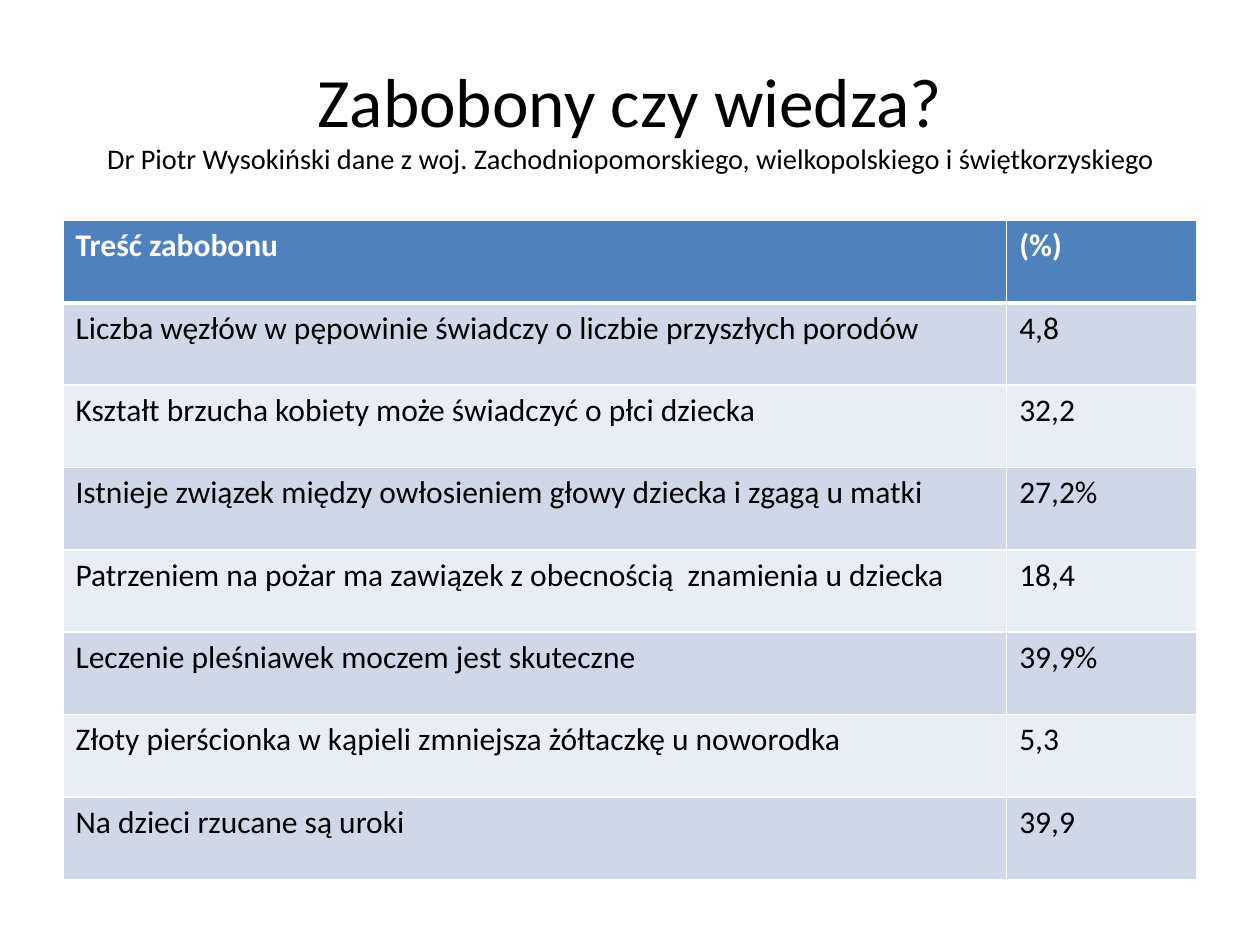
from pptx import Presentation
from pptx.dml.color import RGBColor
from pptx.enum.text import MSO_ANCHOR as Anchor, PP_ALIGN as Align
from pptx.oxml import parse_xml
from pptx.oxml.ns import nsdecls
from pptx.util import Inches, Pt

BLACK = RGBColor(0x00, 0x00, 0x00)
WHITE = RGBColor(0xFF, 0xFF, 0xFF)
BLUE = RGBColor(0x4F, 0x81, 0xBD)
BANDS = [RGBColor(0xE9, 0xED, 0xF4), RGBColor(0xD0, 0xD8, 0xE8)]

ROWS = [
    ("Treść zabobonu", "(%)"),
    ("Liczba węzłów w pępowinie świadczy o liczbie przyszłych porodów", "4,8"),
    ("Kształt brzucha kobiety może świadczyć o płci dziecka", "32,2"),
    ("Istnieje związek między owłosieniem głowy dziecka i zgagą u matki", "27,2%"),
    ("Patrzeniem na pożar ma zawiązek z obecnością  znamienia u dziecka", "18,4"),
    ("Leczenie pleśniawek moczem jest skuteczne", "39,9%"),
    ("Złoty pierścionka w kąpieli zmniejsza żółtaczkę u noworodka", "5,3"),
    ("Na dzieci rzucane są uroki", "39,9"),
]


def add_run(para, text, size, color=BLACK, bold=False):
    run = para.add_run()
    run.text = text
    look = {"name": "Calibri", "size": Pt(size), "bold": bold}
    for key, value in look.items():
        setattr(run.font, key, value)
    run.font.color.rgb = color


def add_edges(cell, widths):
    """Draw white cell borders; widths maps a side (L, R, T, B) to points."""
    props = cell._tc.get_or_add_tcPr()
    for side, width in widths.items():
        props.append(parse_xml(
            f'<a:ln{side} {nsdecls("a")} w="{Pt(width)}"><a:solidFill>'
            f'<a:srgbClr val="{WHITE}"/></a:solidFill></a:ln{side}>'))


prs = Presentation()
prs.slide_width, prs.slide_height = Inches(10), Inches(7.5)
slide = prs.slides.add_slide(prs.slide_layouts[6])

# Title and source line
title = slide.shapes.add_textbox(Inches(0.5), Inches(0.3), Inches(9), Inches(1.25))
frame = title.text_frame
frame.word_wrap = True
frame.vertical_anchor = Anchor.MIDDLE
para = frame.paragraphs[0]
para.alignment = Align.CENTER
add_run(para, "Zabobony czy wiedza?", 39.6)
para.add_line_break()
add_run(para, "Dr Piotr Wysokiński dane z woj. Zachodniopomorskiego, "
              "wielkopolskiego i świętkorzyskiego", 16.2)

# Table of superstitions
table = slide.shapes.add_table(len(ROWS), 2, Inches(0.5), Inches(1.75),
                               Inches(9), Inches(5.23)).table
for col, width in zip(table.columns, (7.49, 1.51)):
    col.width = Inches(width)

for r, row in enumerate(ROWS):
    head = r == 0
    for c, text in enumerate(row):
        cell = table.cell(r, c)
        add_edges(cell, {"L": 1, "R": 1, "T": 3 if r == 1 else 1, "B": 3 if head else 1})
        cell.fill.solid()
        cell.fill.fore_color.rgb = BLUE if head else BANDS[r % 2]
        add_run(cell.text_frame.paragraphs[0], text, 18, WHITE if head else BLACK, head)

prs.save("out.pptx")
